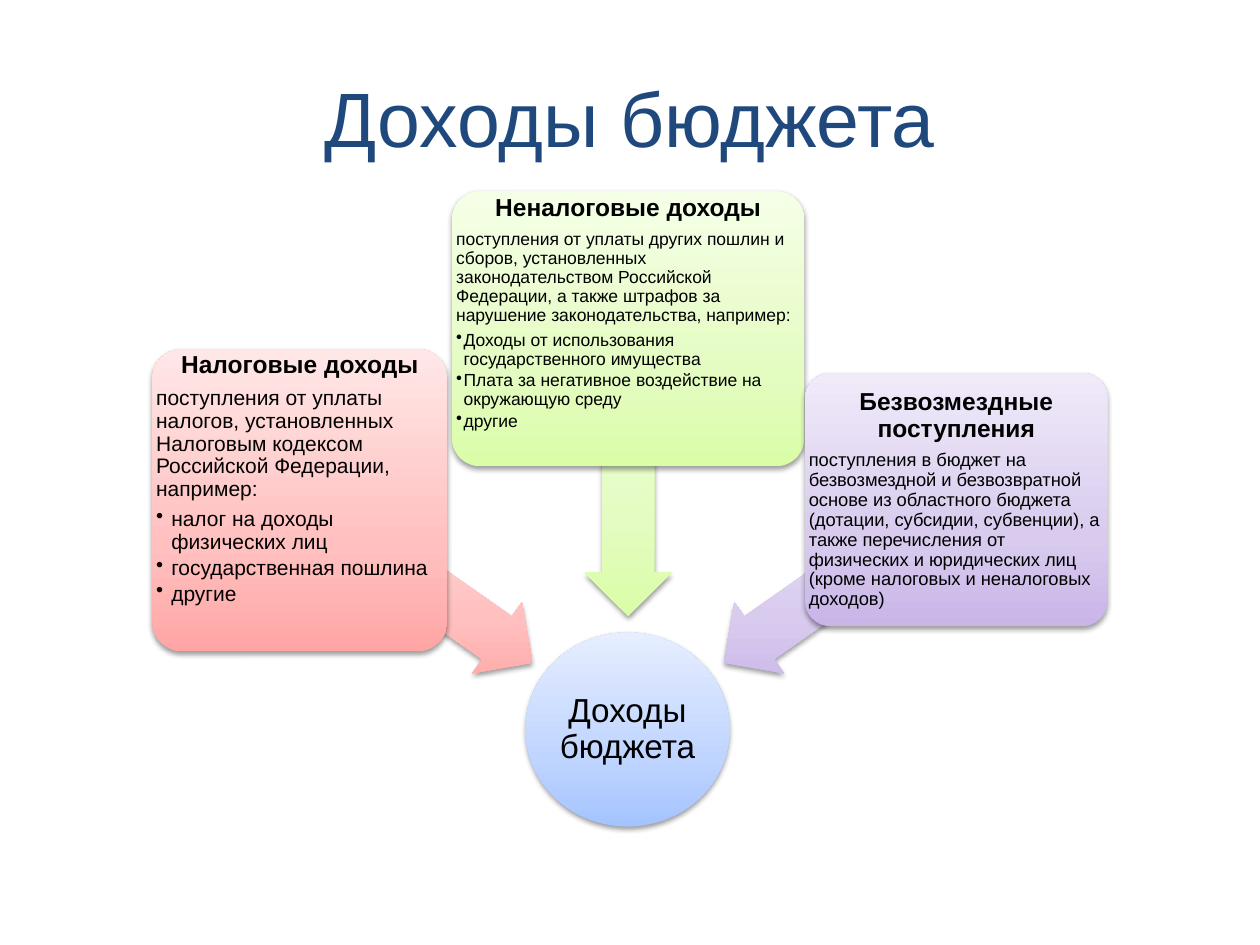
from lxml import etree
from pptx import Presentation
from pptx.dml.color import RGBColor
from pptx.enum.shapes import MSO_SHAPE
from pptx.enum.text import MSO_ANCHOR, PP_ALIGN
from pptx.oxml import parse_xml
from pptx.oxml.ns import nsdecls, qn
from pptx.util import Inches, Pt

COLORS = {"title": "1F497D", "text": "000000", "shadow": "000000"}
# Gradient colours from the bottom edge to the top edge
GRADIENTS = {
    "blue": ("A4C4FF", "BFD4FF", "E6EEFF"),
    "red": ("FFA6A5", "FFC0BF", "FFE7E7"),
    "green": ("DAFDA7", "E4FCC2", "F5FFE7"),
    "purple": ("C9B5E8", "D8CBEE", "F0EAF9"),
}
STOPS = (0, 35000, 100000)

CARDS = [
    dict(box=(1.21, 2.77, 2.34, 2.4), arrow=(2.18, 4.27, 2.25, 0.69), angle=215,
         tint="red", size=12, indent=0.12, anchor=MSO_ANCHOR.TOP,
         heading="Налоговые доходы",
         body="поступления от уплаты налогов, установленных Налоговым кодексом "
              "Российской Федерации, например:",
         items=["налог на доходы физических лиц", "государственная пошлина", "другие"]),
    dict(box=(3.59, 1.52, 2.79, 2.18), arrow=(3.85, 3.41, 2.27, 0.69), angle=270,
         tint="green", size=10, indent=0.06, anchor=MSO_ANCHOR.TOP,
         heading="Неналоговые доходы",
         body="поступления от уплаты других пошлин и сборов, установленных "
              "законодательством Российской Федерации, а также штрафов за нарушение "
              "законодательства, например:",
         items=["Доходы от использования государственного имущества",
                "Плата за негативное воздействие на окружающую среду", "другие"]),
    dict(box=(6.39, 2.96, 2.4, 2.01), arrow=(5.54, 4.27, 2.25, 0.69), angle=325,
         tint="purple", size=10.5, indent=0, anchor=MSO_ANCHOR.MIDDLE,
         heading="Безвозмездные поступления",
         body="поступления в бюджет на безвозмездной и безвозвратной основе из "
              "областного бюджета (дотации, субсидии, субвенции), а также перечисления "
              "от физических и юридических лиц (кроме налоговых и неналоговых доходов)",
         items=[]),
]


def add_tinted_shape(page, kind, box, tint, adjustments=(), angle=0):
    """Add a borderless shape with a vertical gradient and a soft shadow."""
    shape = page.shapes.add_shape(kind, *map(Inches, box))
    for index, value in enumerate(adjustments):
        shape.adjustments[index] = value
    shape.rotation = angle
    shape.line.fill.background()
    stops = "".join(f'<a:gs pos="{position}"><a:srgbClr val="{color}"/></a:gs>'
                    for position, color in zip(STOPS, GRADIENTS[tint]))
    gradient = parse_xml(
        f'<a:gradFill {nsdecls("a")} rotWithShape="0"><a:gsLst>{stops}</a:gsLst>'
        '<a:lin ang="16200000" scaled="0"/></a:gradFill>')
    shadow = parse_xml(
        f'<a:effectLst {nsdecls("a")}><a:outerShdw blurRad="{Pt(3.1)}" dist="{Pt(1.6)}" '
        f'dir="5400000" rotWithShape="0"><a:srgbClr val="{COLORS["shadow"]}">'
        '<a:alpha val="38000"/></a:srgbClr></a:outerShdw></a:effectLst>')
    properties = shape._element.spPr
    properties.find(qn("a:prstGeom")).addnext(gradient)
    properties.append(shadow)
    return shape


def set_frame(frame, margin, anchor):
    frame.word_wrap = True
    frame.vertical_anchor = anchor
    frame.margin_left = frame.margin_right = Inches(margin)
    frame.margin_top = frame.margin_bottom = Inches(margin)


def write(para, text, size, color="text", bold=False, align=PP_ALIGN.LEFT,
          spacing=0.9, after=0.35, indent=0):
    """Fill a paragraph; after is a share of the size, an indent brings a bullet."""
    para.alignment = align
    para.line_spacing = spacing
    para.space_after = Pt(round(size * after, 1))
    if indent:
        para.level = 1
        properties = para._p.get_or_add_pPr()
        properties.set("marL", str(Inches(indent)))
        properties.set("indent", str(-Inches(indent)))
        etree.SubElement(properties, qn("a:buChar")).set("char", "•")
    span = para.add_run()
    span.text = text
    span.font.name = "Arial"
    span.font.size = Pt(size)
    span.font.bold = bold
    span.font.color.rgb = RGBColor.from_string(COLORS[color])


def add_title(page, box, text):
    title = page.shapes.title
    title.left, title.top, title.width, title.height = map(Inches, box)
    title.text_frame.vertical_anchor = MSO_ANCHOR.MIDDLE
    write(title.text_frame.paragraphs[0], text, 44, color="title",
          align=PP_ALIGN.CENTER, spacing=1.0, after=0)


def add_hub(page, box, text):
    hub = add_tinted_shape(page, MSO_SHAPE.OVAL, box, "blue")
    set_frame(hub.text_frame, 0.01, MSO_ANCHOR.MIDDLE)
    write(hub.text_frame.paragraphs[0], text, 19, align=PP_ALIGN.CENTER)


def add_income_card(page, box, arrow, angle, tint, size, indent, anchor,
                    heading, body, items):
    """Add an income source card over the arrow that leads to the hub."""
    add_tinted_shape(page, MSO_SHAPE.LEFT_ARROW, arrow, tint, (0.6, 0.5), angle)
    add_tinted_shape(page, MSO_SHAPE.ROUNDED_RECTANGLE, box, tint, (0.1,))
    frame = page.shapes.add_textbox(*map(Inches, box)).text_frame
    set_frame(frame, 0.03, anchor)
    write(frame.paragraphs[0], heading, 14, bold=True, align=PP_ALIGN.CENTER)
    write(frame.add_paragraph(), body, size)
    for item in items:
        write(frame.add_paragraph(), item, size, after=0.15, indent=indent)


def main():
    deck = Presentation()
    deck.slide_width, deck.slide_height = Inches(10), Inches(7.5)
    page = deck.slides.add_slide(deck.slide_layouts[5])
    add_title(page, (0.5, 0.3, 9, 1.25), "Доходы бюджета")
    add_hub(page, (4.17, 5.02, 1.62, 1.54), "Доходы бюджета")
    for card in CARDS:
        add_income_card(page, **card)
    deck.save("out.pptx")


if __name__ == "__main__":
    main()
